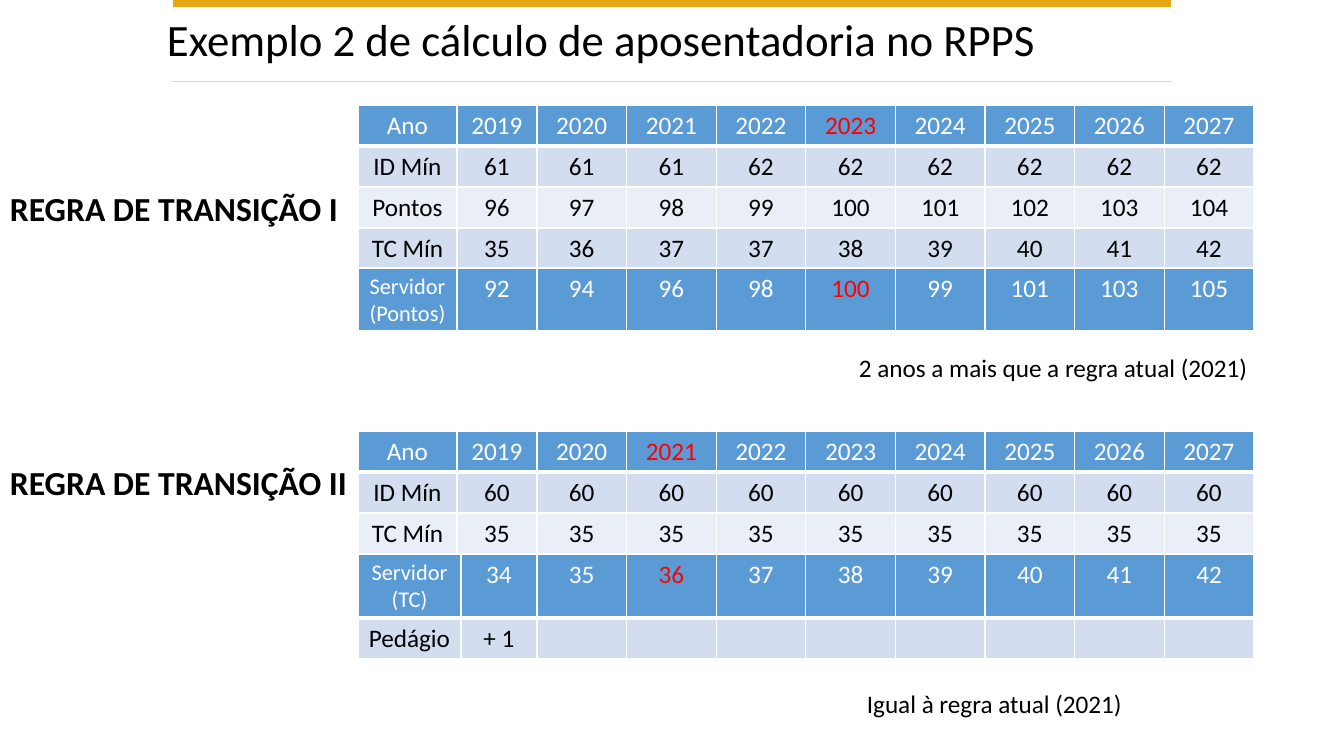
from lxml import etree
from pptx import Presentation
from pptx.dml.color import RGBColor
from pptx.enum.shapes import MSO_CONNECTOR, MSO_SHAPE
from pptx.enum.text import PP_ALIGN
from pptx.oxml.ns import qn
from pptx.util import Emu, Pt

RECT = MSO_SHAPE.RECTANGLE
STRAIGHT = MSO_CONNECTOR.STRAIGHT
CENTER = PP_ALIGN.CENTER
FONT = "Calibri"
EMU_PER_PX = 914400 / 100.8
COLORS = {
    "gold": "E5A812",
    "rule": "D9D9D9",
    "black": "000000",
    "white": "FFFFFF",
    "red": "FF0000",
    "blue": "5B9BD5",
    "pale": "D2DEEF",
    "paler": "EAEFF7",
}
TABLE_X, TABLE_W, YEAR_COLS = 358, 896, 8
ROW_H, SERVER_H = 41, 64
YEARS = ["Ano", *range(2019, 2028)]


def px(n):
    """Convert pixels to EMU."""
    return Emu(round(n * EMU_PER_PX))


def rgb(name):
    """Return the named colour."""
    return RGBColor.from_string(COLORS[name])


def style_run(r, size, color, bold=False):
    """Apply the font to a run."""
    r.font.name = FONT
    r.font.size = Pt(size)
    r.font.bold = bold
    r.font.color.rgb = rgb(color)


def add_bar(s, x, y, w, h, color):
    """Add a plain filled rectangle."""
    sp = s.shapes.add_shape(RECT, px(x), px(y), px(w), px(h))
    sp.shadow.inherit = False
    sp.fill.solid()
    sp.fill.fore_color.rgb = rgb(color)
    sp.line.fill.background()


def add_rule(s, x1, x2, y, color):
    """Add a thin horizontal line."""
    ln = s.shapes.add_connector(STRAIGHT, px(x1), px(y), px(x2), px(y))
    ln.line.color.rgb = rgb(color)
    ln.line.width = Pt(0.5)
    etree.SubElement(ln._element.spPr, qn("a:effectLst"))


def add_text(s, text, x, y, w, h, size, bold=False, wrap=True):
    """Add a one-paragraph text box."""
    tf = s.shapes.add_textbox(px(x), px(y), px(w), px(h)).text_frame
    tf.word_wrap = wrap
    tf.text = text
    style_run(tf.paragraphs[0].runs[0], size, "black", bold)


def set_borders(cell, bottom):
    """Draw white cell borders with the given bottom width."""
    tc_pr = cell._tc.get_or_add_tcPr()
    widths = {"a:lnL": 1, "a:lnR": 1, "a:lnT": 1, "a:lnB": bottom}
    for i, (tag, width) in enumerate(widths.items()):
        ln = etree.Element(qn(tag), w=str(Pt(width)))
        fill = etree.SubElement(ln, qn("a:solidFill"))
        etree.SubElement(fill, qn("a:srgbClr"), val=COLORS["white"])
        tc_pr.insert(i, ln)


def fill_cell(cell, value, fill, size, color):
    """Write and style one centred table cell."""
    strong = fill == "blue"
    cell.fill.solid()
    cell.fill.fore_color.rgb = rgb(fill)
    set_borders(cell, 3 if strong else 1)
    cell.text = str(value)
    p = cell.text_frame.paragraphs[0]
    p.alignment = CENTER
    p.font.size = Pt(size)
    for r in p.runs:
        style_run(r, size, color)


def add_grid(s, y, label_w, first_w, red_col, rows):
    """Add a table of (fill, values) rows with one highlighted column."""
    year_w = (TABLE_W - label_w - first_w) / YEAR_COLS
    widths = [label_w, first_w] + [year_w] * YEAR_COLS
    heights = [SERVER_H if str(values[0]).startswith("Servidor") else ROW_H
               for _, values in rows]
    table = s.shapes.add_table(len(rows), len(widths), px(TABLE_X), px(y),
                               px(TABLE_W), px(sum(heights))).table
    table.first_row = False
    table.horz_banding = False
    for col, w in zip(table.columns, widths):
        col.width = px(w)
    for i, (fill, values) in enumerate(rows):
        table.rows[i].height = px(heights[i])
        for j, value in enumerate(values):
            color = "white" if fill == "blue" else "black"
            if fill == "blue" and j == red_col:
                color = "red"
            size = 16 if j == 0 and heights[i] == SERVER_H else 18
            fill_cell(table.cell(i, j), value, fill, size, color)


def main():
    """Build the slide and save it."""
    prs = Presentation()
    prs.slide_width, prs.slide_height = px(1344), px(756)
    s = prs.slides.add_slide(prs.slide_layouts[6])

    add_bar(s, 173, 0, 998, 7, "gold")
    add_rule(s, 171, 1172, 81, "rule")
    add_text(s, "Exemplo 2 de cálculo de aposentadoria no RPPS",
             157, 7, 1027, 65, 32)

    add_text(s, "REGRA DE TRANSIÇÃO I", 0, 183, 672, 112, 24, bold=True)
    add_grid(s, 105, 99, 80, 5, [
        ("blue", YEARS),
        ("pale", ["ID Mín"] + [61] * 3 + [62] * 6),
        ("paler", ["Pontos", *range(96, 105)]),
        ("pale", ["TC Mín", 35, 36, 37, 37, 38, 39, 40, 41, 42]),
    ])
    add_grid(s, 268, 99, 80, 5, [
        ("blue", ["Servidor (Pontos)", 92, 94, 96, 98, 100, 99, 101, 103, 105]),
    ])
    add_text(s, "2 anos a mais que a regra atual (2021)", 849, 347, 457, 40, 18)

    add_text(s, "REGRA DE TRANSIÇÃO II", 0, 457, 368, 50, 24, bold=True,
             wrap=False)
    add_grid(s, 431, 99, 80, 3, [
        ("blue", YEARS),
        ("pale", ["ID Mín"] + [60] * 9),
        ("paler", ["TC Mín"] + [35] * 9),
    ])
    add_grid(s, 554, 103, 76, 3, [
        ("blue", ["Servidor (TC)", *range(34, 43)]),
        ("pale", ["Pedágio", "+ 1"] + [""] * YEAR_COLS),
    ])
    add_text(s, "Igual à regra atual (2021)", 857, 683, 457, 40, 18)

    prs.save("out.pptx")


if __name__ == "__main__":
    main()
